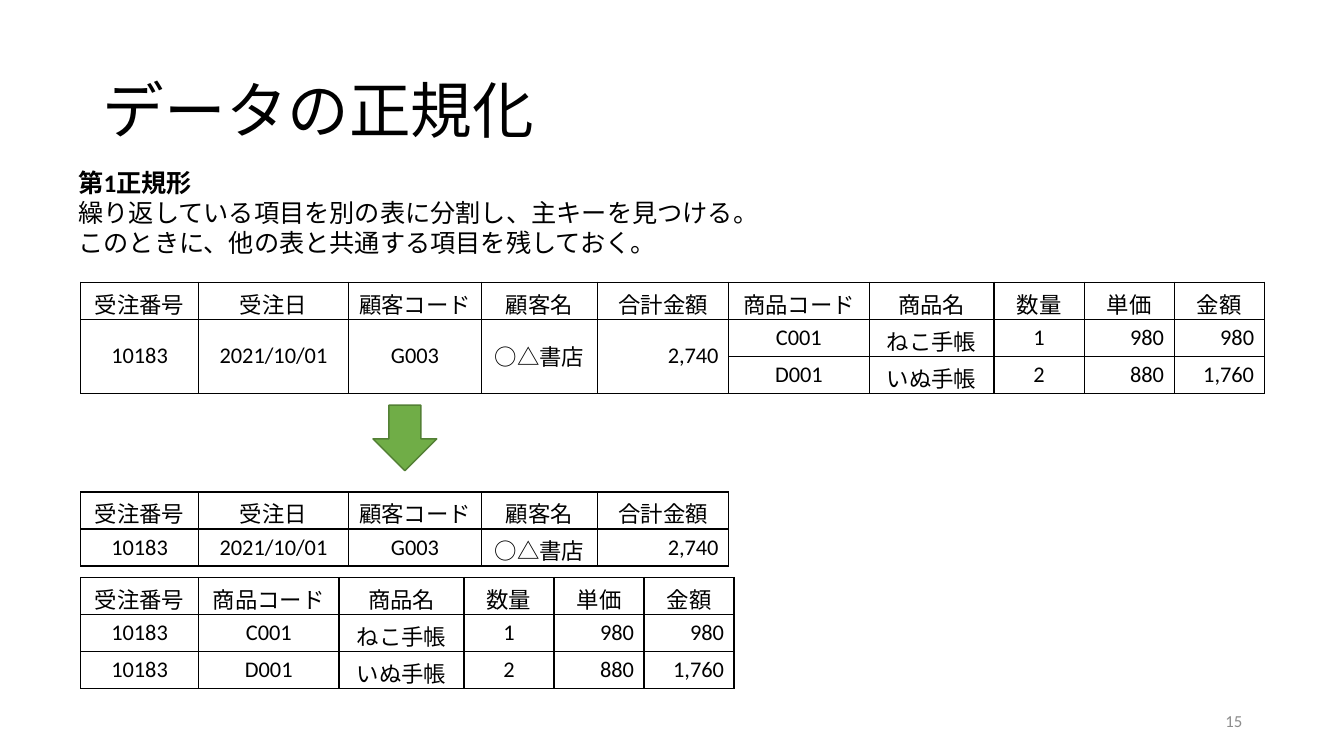
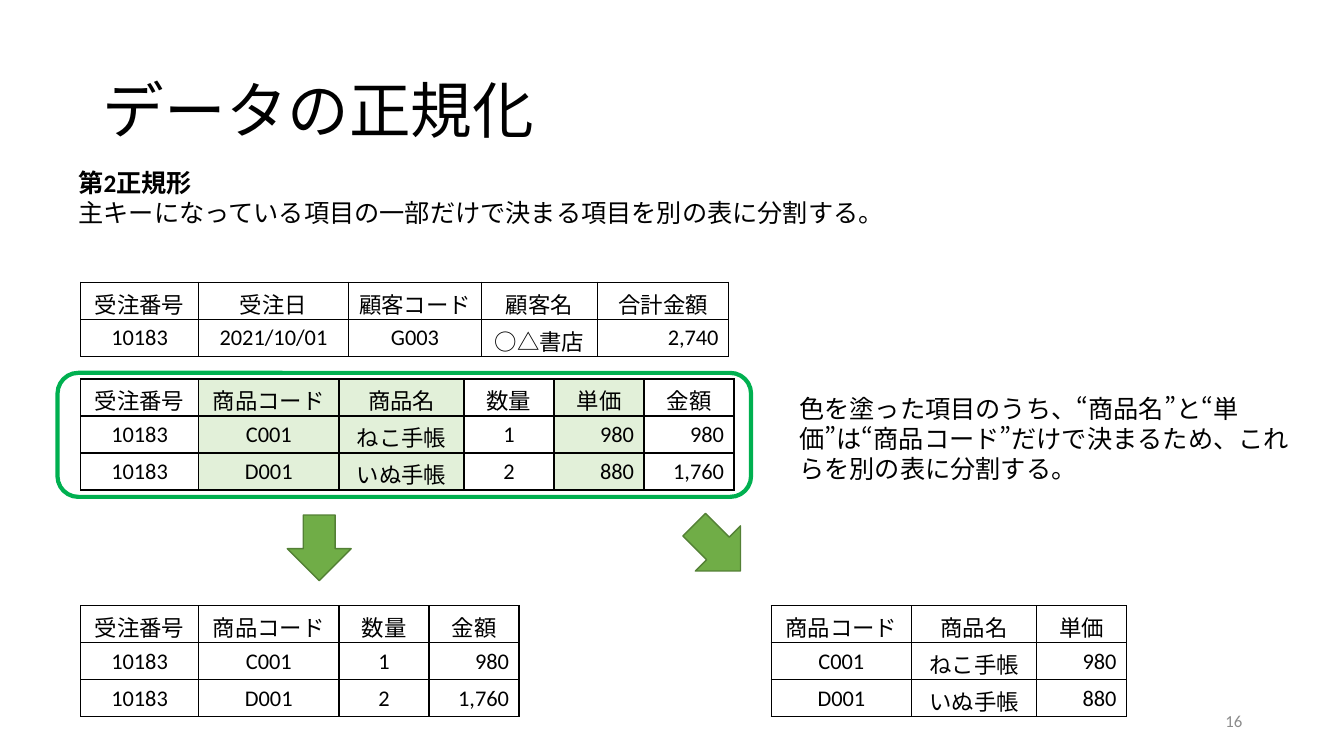
from lxml import etree
from pptx import Presentation
from pptx.dml.color import RGBColor
from pptx.enum.lang import MSO_LANGUAGE_ID
from pptx.enum.shapes import MSO_SHAPE
from pptx.enum.text import MSO_ANCHOR, MSO_AUTO_SIZE, PP_ALIGN
from pptx.oxml.ns import qn
from pptx.util import Inches, Pt

LEFT, CENTER, RIGHT = PP_ALIGN.LEFT, PP_ALIGN.CENTER, PP_ALIGN.RIGHT
TOP, MIDDLE = MSO_ANCHOR.TOP, MSO_ANCHOR.MIDDLE
DOWN_ARROW, ROUNDED = MSO_SHAPE.DOWN_ARROW, MSO_SHAPE.ROUNDED_RECTANGLE
NO_AUTOFIT = MSO_AUTO_SIZE.NONE
JAPANESE = MSO_LANGUAGE_ID.JAPANESE

FONT = "Calibri"
COLORS = {
    "text": "000000",
    "number": "8C8C8C",
    "arrow": "70AD47",
    "arrow_line": "538035",
    "frame": "00B050",
    "highlight": "E2F0D9",
}
WIDTH, HEIGHT = Inches(13.33), Inches(7.5)
TITLE_ONLY = 5

# Positions and sizes are percentages of the slide's width and height
TABLE_LEFT = 6
ROW_HEIGHT = 4.89
ARROW_WIDTH, ARROW_HEIGHT = 4.75, 8.67
LINE_HEIGHT, TEXT_PADDING = 4, 1.47

# Table columns: width and alignment of the values
COLUMNS = {
    "受注番号": (8.78, CENTER),
    "受注日": (11.15, CENTER),
    "顧客コード": (9.9, CENTER),
    "顧客名": (8.63, CENTER),
    "合計金額": (9.77, RIGHT),
    "商品コード": (10.45, CENTER),
    "商品名": (9.3, CENTER),
    "数量": (6.7, CENTER),
    "単価": (6.7, RIGHT),
    "金額": (6.7, RIGHT),
}

# Records; a value missing from a record merges with the cell above
order = {"受注番号": "10183", "受注日": "2021/10/01", "顧客コード": "G003",
         "顧客名": "○△書店", "合計金額": "2,740"}
items = [
    {"商品コード": "C001", "商品名": "ねこ手帳", "数量": "1", "単価": "980", "金額": "980"},
    {"商品コード": "D001", "商品名": "いぬ手帳", "数量": "2", "単価": "880", "金額": "1,760"},
]
details = [{"受注番号": order["受注番号"]} | item for item in items]
order_names, detail_names = list(order), list(details[0])

# Slide content; tables: left, top, column names, records, highlighted columns
# arrows: left, top, rotation; notes: left, top, width, line count, text
SLIDES = [
    {
        "number": "15",
        "heading": ["第1正規形",
                    "繰り返している項目を別の表に分割し、主キーを見つける。",
                    "このときに、他の表と共通する項目を残しておく。"],
        "tables": [
            (TABLE_LEFT, 37.33, list(COLUMNS), [order | items[0], items[1]], []),
            (TABLE_LEFT, 65.07, order_names, [order], []),
            (TABLE_LEFT, 76.4, detail_names, details, []),
        ],
        "arrows": [(27.75, 53.6, 0)],
        "frames": [],
        "notes": [],
    },
    {
        "number": "16",
        "heading": ["第2正規形",
                    "主キーになっている項目の一部だけで決まる項目を別の表に分割する。"],
        "tables": [
            (TABLE_LEFT, 37.33, order_names, [order], []),
            (TABLE_LEFT, 50.13, detail_names, details, ["商品コード", "商品名", "単価"]),
            (TABLE_LEFT, 80.13, ["受注番号", "商品コード", "数量", "金額"], details, []),
            (57.38, 80.13, ["商品コード", "商品名", "単価"], items, []),
        ],
        "arrows": [(21.38, 68.13, 0), (51, 68.13, 315)],
        "frames": [(4.28, 49.33, 51.6, 16.4)],
        "notes": [(58.73, 51.33, 38.48, 3,
                   "色を塗った項目のうち、“商品名”と“単価”は“商品コード”だけで決まるため、"
                   "これらを別の表に分割する。")],
    },
]


def place(left, top, width, height):
    """Turn percentages of the slide into lengths."""
    return (int(WIDTH * left / 100), int(HEIGHT * top / 100),
            int(WIDTH * width / 100), int(HEIGHT * height / 100))


def write_lines(text_frame, lines, size, align=LEFT, anchor=TOP, color="text", bold_first=False):
    """Write one paragraph per line."""
    text_frame.word_wrap = True
    text_frame.vertical_anchor = anchor
    for index, line in enumerate(lines):
        paragraph = text_frame.paragraphs[0] if index == 0 else text_frame.add_paragraph()
        paragraph.alignment = align
        run = paragraph.add_run()
        run.text = line
        run.font.name = FONT
        run.font.size = Pt(size)
        run.font.bold = bold_first and index == 0
        run.font.color.rgb = RGBColor.from_string(COLORS[color])
        run.font.language_id = JAPANESE


presentation = Presentation()
presentation.slide_width, presentation.slide_height = WIDTH, HEIGHT

for content in SLIDES:
    slide = presentation.slides.add_slide(presentation.slide_layouts[TITLE_ONLY])
    shapes = slide.shapes

    # Title
    title = shapes.title
    title.left, title.top, title.width, title.height = place(6.9, 5.33, 86.25, 19.33)
    title.text_frame.auto_size = NO_AUTOFIT
    write_lines(title.text_frame, ["データの正規化"], 44, anchor=MIDDLE)
    title.text_frame.paragraphs[0].line_spacing = 0.9

    # Slide number
    number = shapes.add_textbox(*place(70.67, 92.67, 22.5, 5.33))
    write_lines(number.text_frame, [content["number"]], 12, RIGHT, MIDDLE, "number")

    # Heading and explanation
    lines = content["heading"]
    heading = shapes.add_textbox(
        *place(5.1, 21.47, 89.93, LINE_HEIGHT * len(lines) + TEXT_PADDING))
    write_lines(heading.text_frame, lines, 18, bold_first=True)

    # Tables
    for left, top, names, records, highlighted in content["tables"]:
        table_width = sum(COLUMNS[name][0] for name in names)
        row_count = len(records) + 1
        table = shapes.add_table(
            row_count, len(names),
            *place(left, top, table_width, ROW_HEIGHT * row_count)).table
        table.first_row = table.horz_banding = False
        for column, name in enumerate(names):
            column_width, value_align = COLUMNS[name]
            table.columns[column].width = int(WIDTH * column_width / 100)
            values = [name] + [record.get(name) for record in records]
            for row, value in enumerate(values):
                cell = table.cell(row, column)
                # Borders come before the fill in the cell's properties
                properties = cell._tc.get_or_add_tcPr()
                for side in ("a:lnL", "a:lnR", "a:lnT", "a:lnB"):
                    border = etree.SubElement(properties, qn(side), w=str(Pt(1)))
                    fill = etree.SubElement(border, qn("a:solidFill"))
                    etree.SubElement(fill, qn("a:srgbClr"), val=COLORS["text"])
                if name in highlighted:
                    cell.fill.solid()
                    cell.fill.fore_color.rgb = RGBColor.from_string(COLORS["highlight"])
                else:
                    cell.fill.background()
                if value is None:
                    table.cell(row - 1, column).merge(cell)
                    continue
                is_header = row == 0
                write_lines(cell.text_frame, [value], 16, CENTER if is_header else value_align)
                cell.vertical_anchor = TOP if is_header else MIDDLE

    # Arrows
    for left, top, rotation in content["arrows"]:
        arrow = shapes.add_shape(DOWN_ARROW, *place(left, top, ARROW_WIDTH, ARROW_HEIGHT))
        arrow.rotation = rotation
        arrow.shadow.inherit = False
        arrow.fill.solid()
        arrow.fill.fore_color.rgb = RGBColor.from_string(COLORS["arrow"])
        arrow.line.color.rgb = RGBColor.from_string(COLORS["arrow_line"])
        arrow.line.width = Pt(1)

    # Frames around tables
    for frame_place in content["frames"]:
        frame = shapes.add_shape(ROUNDED, *place(*frame_place))
        frame.shadow.inherit = False
        frame.fill.background()
        frame.line.color.rgb = RGBColor.from_string(COLORS["frame"])
        frame.line.width = Pt(3)

    # Side notes
    for left, top, width, line_count, text in content["notes"]:
        note = shapes.add_textbox(
            *place(left, top, width, LINE_HEIGHT * line_count + TEXT_PADDING))
        write_lines(note.text_frame, [text], 18)

presentation.save("out.pptx")
